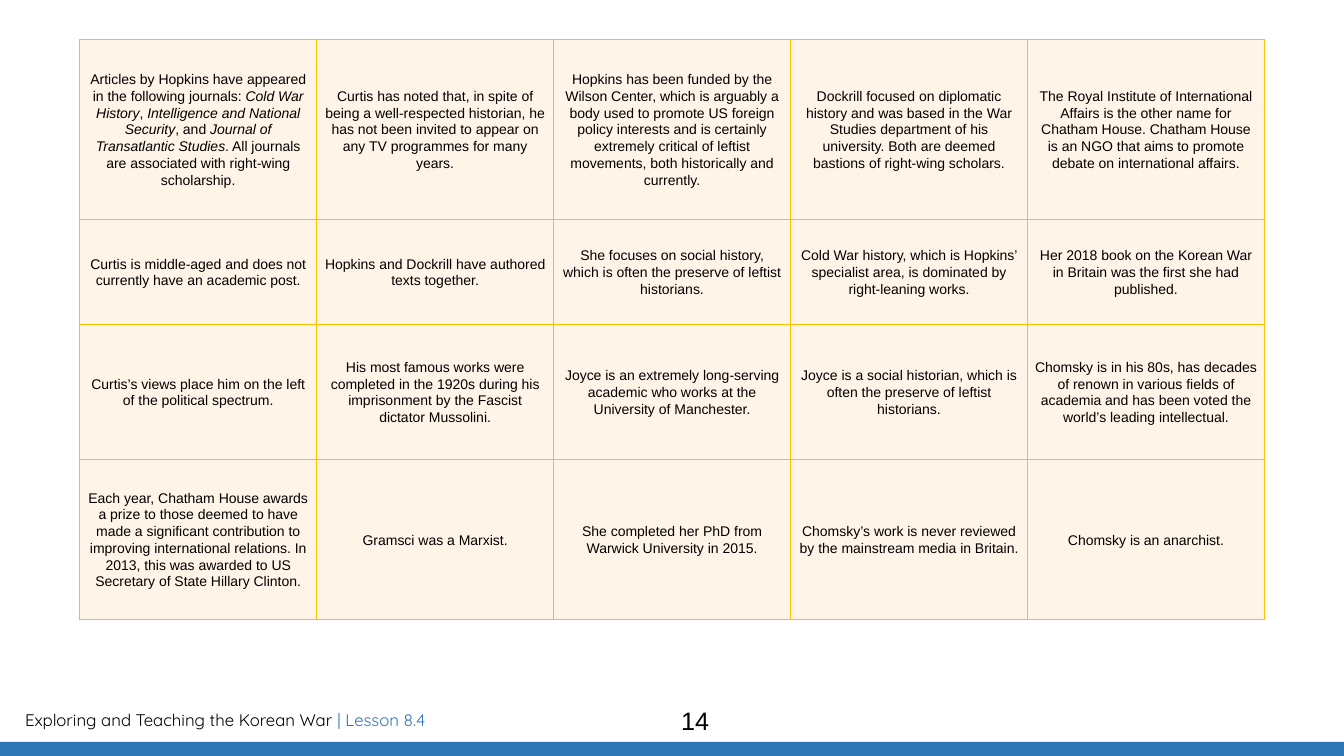
from dataclasses import dataclass

from lxml import etree
from pptx import Presentation
from pptx.dml.color import RGBColor
from pptx.enum.shapes import MSO_SHAPE
from pptx.enum.text import MSO_ANCHOR, PP_ALIGN
from pptx.oxml.ns import qn
from pptx.util import Inches, Pt

RECTANGLE = MSO_SHAPE.RECTANGLE
MIDDLE = MSO_ANCHOR.MIDDLE
LEFT, CENTER = PP_ALIGN.LEFT, PP_ALIGN.CENTER

SLIDE_WIDTH, SLIDE_HEIGHT = 13.33, 7.5
COLORS = {"text": "000000", "accent": "2E75B6", "cell": "FFF4E7", "border": "FFC000"}

# Grid of evidence cards
GRID_LEFT, GRID_TOP = 0.79, 0.39
COLUMN_WIDTH = 2.35
ROW_HEIGHTS = (1.79, 1.04, 1.34, 1.59)
BORDER_WIDTH = Pt(1)
CELL_FORMAT = {
    "margin_left": Inches(0.07),
    "margin_right": Inches(0.07),
    "margin_top": 0,
    "margin_bottom": 0,
    "vertical_anchor": MIDDLE,
}

# Text between asterisks is italic
EVIDENCE = (
    (
        "Articles by Hopkins have appeared in the following journals: *Cold War History*, "
        "*Intelligence and National Security*, and *Journal of Transatlantic Studies*. "
        "All journals are associated with right-wing scholarship.",
        "Curtis has noted that, in spite of being a well-respected historian, he has not been "
        "invited to appear on any TV programmes for many years.",
        "Hopkins has been funded by the Wilson Center, which is arguably a body used to promote "
        "US foreign policy interests and is certainly extremely critical of leftist movements, "
        "both historically and currently.",
        "Dockrill focused on diplomatic history and was based in the War Studies department of "
        "his university. Both are deemed bastions of right-wing scholars.",
        "The Royal Institute of International Affairs is the other name for Chatham House. "
        "Chatham House is an NGO that aims to promote debate on international affairs.",
    ),
    (
        "Curtis is middle-aged and does not currently have an academic post.",
        "Hopkins and Dockrill have authored texts together.",
        "She focuses on social history, which is often the preserve of leftist historians.",
        "Cold War history, which is Hopkins’ specialist area, is dominated by "
        "right-leaning works.",
        "Her 2018 book on the Korean War in Britain was the first she had published.",
    ),
    (
        "Curtis’s views place him on the left of the political spectrum.",
        "His most famous works were completed in the 1920s during his imprisonment by the "
        "Fascist dictator Mussolini.",
        "Joyce is an extremely long-serving academic who works at the University of Manchester.",
        "Joyce is a social historian, which is often the preserve of leftist historians.",
        "Chomsky is in his 80s, has decades of renown in various fields of academia and has "
        "been voted the world’s leading intellectual.",
    ),
    (
        "Each year, Chatham House awards a prize to those deemed to have made a significant "
        "contribution to improving international relations. In 2013, this was awarded to US "
        "Secretary of State Hillary Clinton.",
        "Gramsci was a Marxist.",
        "She completed her PhD from Warwick University in 2015.",
        "Chomsky’s work is never reviewed by the mainstream media in Britain.",
        "Chomsky is an anarchist.",
    ),
)


@dataclass(frozen=True)
class Span:
    text: str
    color: str = "text"
    italic: bool = False


@dataclass(frozen=True)
class FooterLabel:
    left: float
    top: float
    width: float
    height: float
    spans: tuple[Span, ...]
    font: str
    size: int
    align: PP_ALIGN


FOOTER_LABELS = (
    FooterLabel(0.15, 6.99, 7.82, 0.3,
                (Span("Exploring and Teaching the Korean War "),
                 Span("| Lesson 8.4", "accent")),
                "Quicksand", 12, LEFT),
    FooterLabel(4.36, 6.95, 5.07, 0.4, (Span("14"),), "Arial", 18, CENTER),
)


def rgb(name: str) -> RGBColor:
    return RGBColor.from_string(COLORS[name])


def write_spans(paragraph, spans: tuple[Span, ...], font: str, size: int, align: PP_ALIGN) -> None:
    paragraph.alignment = align
    for span in spans:
        run = paragraph.add_run()
        run.text = span.text
        font_format = {"name": font, "size": Pt(size), "italic": span.italic, "bold": False}
        for attribute, value in font_format.items():
            setattr(run.font, attribute, value)
        run.font.color.rgb = rgb(span.color)


def add_borders(cell) -> None:
    properties = cell._tc.get_or_add_tcPr()
    for position, side in enumerate(("a:lnL", "a:lnR", "a:lnT", "a:lnB")):
        line = etree.Element(qn(side), w=str(BORDER_WIDTH))
        fill = etree.SubElement(line, qn("a:solidFill"))
        etree.SubElement(fill, qn("a:srgbClr"), val=COLORS["border"])
        properties.insert(position, line)


def fill_cell(cell, text: str) -> None:
    for attribute, value in CELL_FORMAT.items():
        setattr(cell, attribute, value)
    cell.fill.solid()
    cell.fill.fore_color.rgb = rgb("cell")
    add_borders(cell)
    spans = tuple(Span(part, italic=index % 2 == 1)
                  for index, part in enumerate(text.split("*")))
    paragraph = cell.text_frame.paragraphs[0]
    paragraph.line_spacing = 1.07
    write_spans(paragraph, spans, "Arial", 10, CENTER)


def add_evidence_grid(slide) -> None:
    column_count = len(EVIDENCE[0])
    grid = slide.shapes.add_table(
        len(EVIDENCE), column_count, Inches(GRID_LEFT), Inches(GRID_TOP),
        Inches(COLUMN_WIDTH * column_count), Inches(sum(ROW_HEIGHTS))).table
    grid.first_row = grid.horz_banding = False
    for column in grid.columns:
        column.width = Inches(COLUMN_WIDTH)
    for row_index, (height, statements) in enumerate(zip(ROW_HEIGHTS, EVIDENCE)):
        grid.rows[row_index].height = Inches(height)
        for column_index, statement in enumerate(statements):
            fill_cell(grid.cell(row_index, column_index), statement)


def add_footer_band(slide) -> None:
    band = slide.shapes.add_shape(RECTANGLE, 0, Inches(7.36),
                                  Inches(SLIDE_WIDTH), Inches(SLIDE_HEIGHT - 7.36))
    band.shadow.inherit = False
    band.fill.solid()
    band.fill.fore_color.rgb = rgb("accent")
    band.line.fill.background()


def add_footer_label(slide, label: FooterLabel) -> None:
    bounds = (label.left, label.top, label.width, label.height)
    frame = slide.shapes.add_textbox(*map(Inches, bounds)).text_frame
    frame.word_wrap = True
    frame.vertical_anchor = MIDDLE
    write_spans(frame.paragraphs[0], label.spans, label.font, label.size, label.align)


def main() -> None:
    presentation = Presentation()
    presentation.slide_width = Inches(SLIDE_WIDTH)
    presentation.slide_height = Inches(SLIDE_HEIGHT)
    slide = presentation.slides.add_slide(presentation.slide_layouts[6])
    add_footer_band(slide)
    add_evidence_grid(slide)
    for label in FOOTER_LABELS:
        add_footer_label(slide, label)
    presentation.save("out.pptx")


if __name__ == "__main__":
    main()
